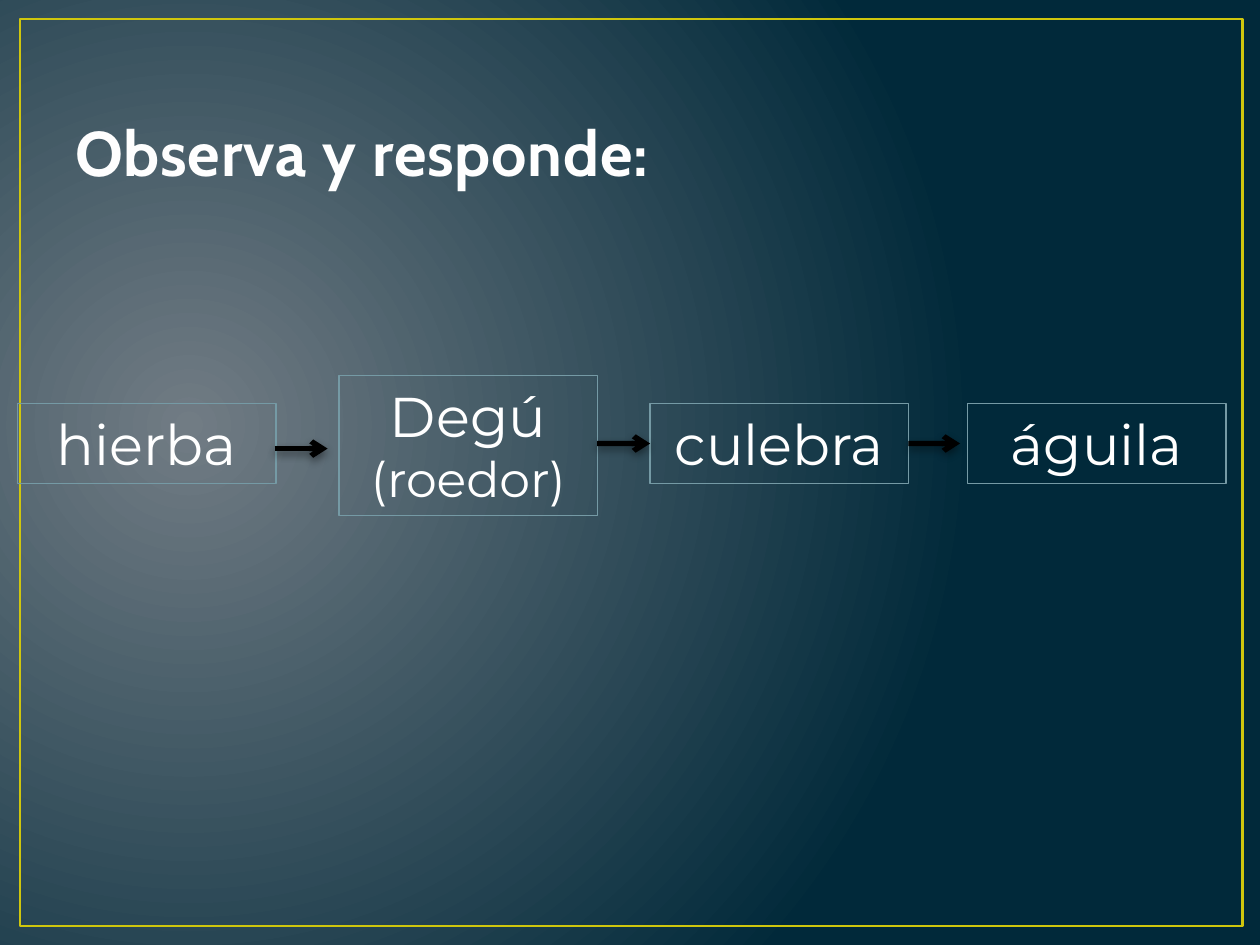
from lxml import etree
from pptx import Presentation
from pptx.dml.color import RGBColor
from pptx.enum.shapes import MSO_CONNECTOR, MSO_SHAPE
from pptx.enum.text import MSO_ANCHOR, MSO_AUTO_SIZE, PP_ALIGN
from pptx.oxml.ns import qn
from pptx.util import Inches, Pt

RECTANGLE = MSO_SHAPE.RECTANGLE
STRAIGHT = MSO_CONNECTOR.STRAIGHT
TOP, BOTTOM = MSO_ANCHOR.TOP, MSO_ANCHOR.BOTTOM
GROW = MSO_AUTO_SIZE.SHAPE_TO_FIT_TEXT
CENTER = PP_ALIGN.CENTER
LEFT_SIDE, RIGHT_SIDE = 1, 3

COLORS = {"glow": "717C84", "night": "01293A", "frame": "CFC60D",
          "title": "FEFEFE", "box": "759AA5", "text": "FFFFFF", "arrow": "000000"}

deck = Presentation()
deck.slide_width, deck.slide_height = Inches(10), Inches(7.5)
COL, ROW = deck.slide_width / 100, deck.slide_height / 100
slide = deck.slides.add_slide(deck.slide_layouts[6])


def add_outline(left, top, width, height, color, weight):
    outline = slide.shapes.add_shape(
        RECTANGLE, int(left * COL), int(top * ROW), int(width * COL), int(height * ROW))
    outline.shadow.inherit = False
    outline.fill.background()
    outline.line.color.rgb = RGBColor.from_string(COLORS[color])
    outline.line.width = Pt(weight)
    return outline


def add_text(paragraph, text, size, font, color):
    run = paragraph.add_run()
    run.text = text
    run.font.size = Pt(size)
    run.font.name = font
    run.font.color.rgb = RGBColor.from_string(COLORS[color])
    return run


backdrop = slide.background.fill
backdrop.gradient()
for stop, color in zip(backdrop.gradient_stops, ("glow", "night")):
    stop.color.rgb = RGBColor.from_string(COLORS[color])
gradient = slide.element.find(".//" + qn("a:gradFill"))
gradient.remove(gradient.find(qn("a:lin")))
circle = etree.SubElement(gradient, qn("a:path"), path="circle")
etree.SubElement(circle, qn("a:fillToRect"), l="15000", t="50000", r="85000", b="60000")

add_outline(1.6, 2, 97, 96, "frame", 1.5)

heading = slide.shapes.add_textbox(
    int(5 * COL), int(4 * ROW), int(90 * COL), int(16.67 * ROW)).text_frame
heading.word_wrap = True
heading.vertical_anchor = BOTTOM
title = add_text(heading.paragraphs[0], "Observa y responde:", 36, "Cabin", "title")
title.font.bold = True
title.font._element.set("spc", "50")

food_chain = [
    (1.4, 42.67, 8.53, [("hierba", 32)]),
    (26.9, 39.73, 14.8, [("Degú", 32), ("(roedor)", 28)]),
    (51.6, 42.67, 8.53, [("culebra", 32)]),
    (76.8, 42.67, 8.53, [("águila", 32)]),
]
organisms = []
for left, top, height, lines in food_chain:
    organism = add_outline(left, top, 20.5, height, "box", 0.75)
    label = organism.text_frame
    label.word_wrap = True
    label.auto_size = GROW
    label.vertical_anchor = TOP
    for index, (text, size) in enumerate(lines):
        paragraph = label.add_paragraph() if index else label.paragraphs[0]
        paragraph.alignment = CENTER
        add_text(paragraph, text, size, "Montserrat", "text")
    organisms.append(organism)

grass, degu, snake, eagle = organisms
arrows = [(21.8, 47.47, None, None), (72, 46.93, snake, None), (47.4, 46.93, None, snake)]
for left, level, eater_from, eater_to in arrows:
    arrow = slide.shapes.add_connector(
        STRAIGHT, int(left * COL), int(level * ROW), int((left + 4.2) * COL), int(level * ROW))
    if eater_from:
        arrow.begin_connect(eater_from, RIGHT_SIDE)
    if eater_to:
        arrow.end_connect(eater_to, LEFT_SIDE)
    arrow.line.color.rgb = RGBColor.from_string(COLORS["arrow"])
    arrow.line.width = Pt(3)
    etree.SubElement(arrow.line._get_or_add_ln(), qn("a:tailEnd"), type="arrow")
    effects = etree.SubElement(arrow._element.spPr, qn("a:effectLst"))
    shadow = etree.SubElement(effects, qn("a:outerShdw"), blurRad=str(Pt(5)),
                              dist=str(Pt(2)), dir="5400000", rotWithShape="0")
    shade = etree.SubElement(shadow, qn("a:srgbClr"), val=COLORS["arrow"])
    etree.SubElement(shade, qn("a:alpha"), val="43000")

deck.save("out.pptx")
